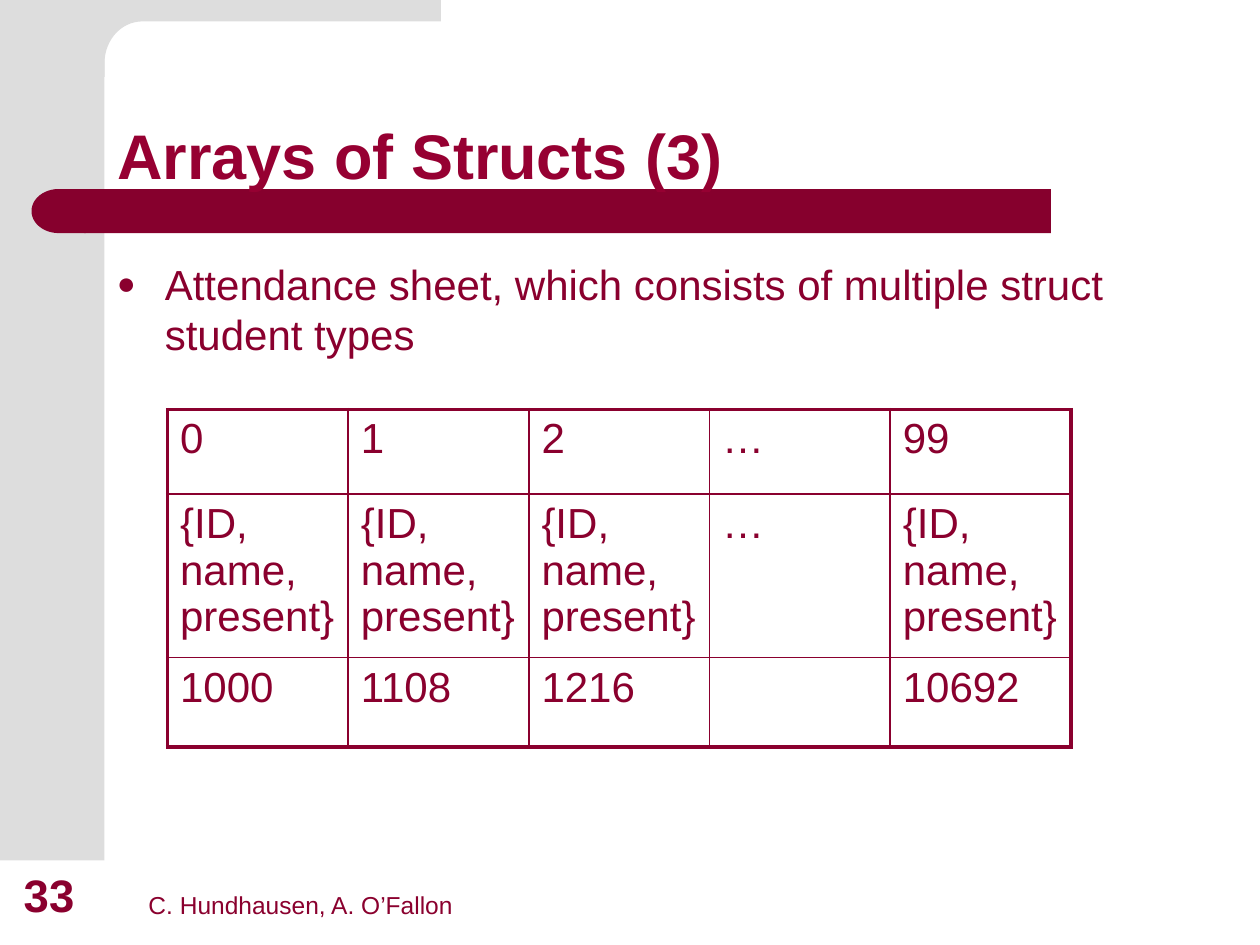
from math import cos, sin, radians
from lxml import etree
from pptx import Presentation
from pptx.dml.color import RGBColor
from pptx.enum import shapes as sh, text as tx
from pptx.oxml import ns
from pptx.util import Inches, Pt

GRAY = RGBColor(0xDD, 0xDD, 0xDD)
BAR = RGBColor(0x86, 0x00, 0x2D)
INK = RGBColor(0x8A, 0x00, 0x2E)
HEAD = RGBColor(0x96, 0x00, 0x32)


def paint(shape, color):
    shape.shadow.inherit = False
    shape.fill.solid()
    shape.fill.fore_color.rgb = color
    shape.line.fill.background()


def write(frame, words, size, color=INK, bold=False):
    frame.word_wrap = True
    para = frame.paragraphs[0]
    run = para.add_run()
    run.text = words
    para.alignment = tx.PP_ALIGN.LEFT
    for key, val in {"name": "Arial", "size": Pt(size), "bold": bold}.items():
        setattr(run.font, key, val)
    run.font.color.rgb = color
    return para


deck = Presentation()
deck.slide_width, deck.slide_height = Inches(10), Inches(7.5)
slide = deck.slides.add_slide(deck.slide_layouts[5])
items = slide.shapes

# Gray side band, and a top band with a rounded inner corner
side = items.add_shape(sh.MSO_SHAPE.RECTANGLE, 0, 0, Inches(0.83), Inches(6.83))
paint(side, GRAY)
arc = [(1.13 - 0.3 * sin(radians(a)), 0.5 - 0.33 * cos(radians(a)))
       for a in range(0, 91, 6)]
edge = [(3.5, 0.17), *arc, (0.83, 0.61), (0.5, 0.61), (0.5, 0)]
pen = items.build_freeform(Inches(3.5), 0)
pen.add_line_segments([(Inches(x), Inches(y)) for x, y in edge], close=True)
paint(pen.convert_to_shape(), GRAY)

# Title bar with a rounded left end
bar = items.add_shape(sh.MSO_SHAPE.RECTANGLE,
                      Inches(0.67), Inches(1.5), Inches(7.67), Inches(0.35))
cap = items.add_shape(sh.MSO_SHAPE.FLOWCHART_DELAY,
                      Inches(0.25), Inches(1.5), Inches(0.43), Inches(0.35))
cap.rotation = 180
for part in (bar, cap):
    paint(part, BAR)

# The title lies over the bar
title = items.title
title.left, title.top = Inches(0.83), Inches(0.33)
title.width, title.height = Inches(8.67), Inches(1.25)
title.text_frame.vertical_anchor = tx.MSO_ANCHOR.BOTTOM
title.text_frame.auto_size = tx.MSO_AUTO_SIZE.NONE
write(title.text_frame, "Arrays of Structs (3)", 36, HEAD, True).line_spacing = 0.9
bar.element.getparent().append(title.element)

# Footer and slide number
for words, left, wide, high, size, bold in (
        ("C. Hundhausen, A. O’Fallon", 1.08, 3.75, 0.52, 14, False),
        ("33", 0.09, 0.64, 0.53, 26, True)):
    box = items.add_textbox(Inches(left), Inches(6.83), Inches(wide), Inches(high))
    box.text_frame.vertical_anchor = tx.MSO_ANCHOR.BOTTOM
    write(box.text_frame, words, size, bold=bold)

# Bullet text
body = items.add_textbox(Inches(0.83), Inches(2), Inches(8.08), Inches(4.07))
para = write(body.text_frame,
             "Attendance sheet, which consists of multiple struct student types", 24)
props = para._p.get_or_add_pPr()
props.set("marL", str(Inches(0.38)))
props.set("indent", str(-Inches(0.38)))
tint = etree.SubElement(props, ns.qn("a:buClr"))
etree.SubElement(tint, ns.qn("a:srgbClr"), val=str(INK))
etree.SubElement(props, ns.qn("a:buSzPct"), val="75000")
etree.SubElement(props, ns.qn("a:buFont"), typeface="Arial")
etree.SubElement(props, ns.qn("a:buChar"), char="●")

# Table of array slots: index, content, address
item = "{ID, name, present}"
rows = [["0", "1", "2", "…", "99"],
        [item, item, item, "…", item],
        ["1000", "1108", "1216", "", "10692"]]
table = items.add_table(3, 5, Inches(1.33), Inches(3.25),
                        Inches(7.17), Inches(2.68)).table
table.first_row = table.horz_banding = False
for row, high in zip(table.rows, (0.67, 1.3, 0.71)):
    row.height = Inches(high)
for r, line in enumerate(rows):
    for c, words in enumerate(line):
        cell = table.cell(r, c)
        cell.fill.background()
        if words:
            write(cell.text_frame, words, 24)
        outer = {"lnL": c == 0, "lnR": c == 4, "lnT": r == 0, "lnB": r == 2}
        props = cell._tc.get_or_add_tcPr()
        for spot, (side, thick) in enumerate(outer.items()):
            rule = etree.Element(ns.qn("a:" + side), w=str(Pt(2.25 if thick else 1)))
            fill = etree.SubElement(rule, ns.qn("a:solidFill"))
            etree.SubElement(fill, ns.qn("a:srgbClr"), val=str(INK))
            props.insert(spot, rule)

deck.save("out.pptx")
